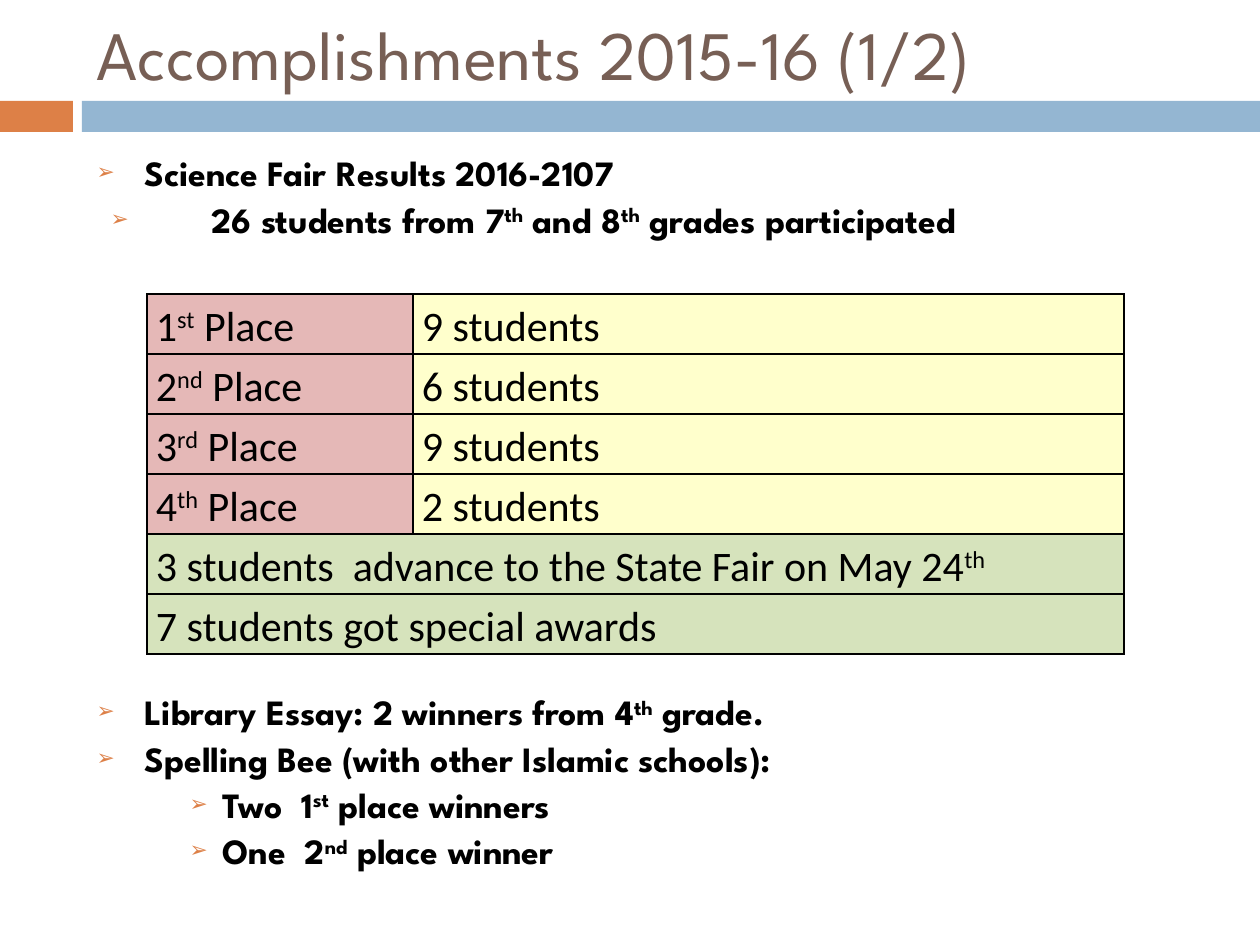
"""Build the school accomplishments slide with its science fair results table."""
from dataclasses import dataclass

from lxml import etree
from pptx import Presentation
from pptx import util as u
from pptx.dml.color import RGBColor
from pptx.enum import shapes, text
from pptx.oxml import ns


@dataclass(frozen=True)
class Theme:
    heading_font: str = "League Spartan"
    table_font: str = "Calibri"
    heading: str = "775F55"
    ink: str = "000000"
    accent: str = "DD8047"
    band: str = "94B6D2"
    place: str = "E5B8B7"
    count: str = "FFFFCC"
    summary: str = "D6E3BC"
    title_size: float = 39.6
    body_size: float = 20.3
    table_size: float = 24


def px(length):
    return u.Emu(round(length * 914400 / 126))


def assign(target, values):
    for name, value in values.items():
        setattr(target, name, value)


def add_xml(parent, tag, **attributes):
    return etree.SubElement(parent, ns.qn(tag), attributes)


class SlideBuilder:
    def __init__(self, slide, theme):
        self.slide = slide
        self.theme = theme

    def add_runs(self, paragraph, wording, font, size, color, bold=False):
        for index, part in enumerate(wording.split("^")):
            if not part:
                continue
            run = paragraph.add_run()
            run.text = part
            assign(run.font, {"name": font, "size": u.Pt(size), "bold": bold})
            run.font.color.rgb = RGBColor.from_string(color)
            if index % 2:
                run.font._element.set("baseline", "30000")

    def place(self, holder, box, anchor):
        assign(holder, dict(zip(("left", "top", "width", "height"), map(px, box))))
        sides = ("left", "top", "right", "bottom")
        assign(holder.text_frame, {f"margin_{side}": u.Inches(0.1) for side in sides})
        assign(holder.text_frame, {"vertical_anchor": anchor, "word_wrap": True,
                                   "auto_size": text.MSO_AUTO_SIZE.NONE})
        return holder.text_frame

    def bar(self, box, color):
        bar = self.slide.shapes.add_shape(shapes.MSO_SHAPE.RECTANGLE, *map(px, box))
        bar.shadow.inherit = False
        bar.fill.solid()
        bar.fill.fore_color.rgb = RGBColor.from_string(color)
        bar.line.fill.background()

    def title(self, wording, box):
        frame = self.place(self.slide.shapes.title, box, text.MSO_ANCHOR.MIDDLE)
        heading = frame.paragraphs[0]
        heading.alignment = text.PP_ALIGN.LEFT
        self.add_runs(heading, wording, self.theme.heading_font,
                      self.theme.title_size, self.theme.heading)

    def bullets(self, items, box):
        frame = self.place(self.slide.placeholders[1], box, text.MSO_ANCHOR.TOP)
        for index, (wording, level, margin, hanging, before) in enumerate(items):
            item = frame.add_paragraph() if index else frame.paragraphs[0]
            assign(item, {"level": level, "line_spacing": 0.8,
                          "space_before": u.Pt(before),
                          "alignment": text.PP_ALIGN.LEFT})
            layout = item._p.get_or_add_pPr()
            layout.set("marL", str(px(margin)))
            layout.set("indent", str(px(-hanging)))
            add_xml(add_xml(layout, "a:buClr"), "a:srgbClr", val=self.theme.accent)
            add_xml(layout, "a:buSzPct", val="61000")
            add_xml(layout, "a:buChar", char="➢")
            self.add_runs(item, wording, self.theme.heading_font,
                          self.theme.body_size, self.theme.ink, bold=True)

    def cell(self, cell, wording, color):
        assign(cell, {"margin_left": px(9), "margin_right": px(9),
                      "margin_top": 0, "margin_bottom": 0})
        if wording:
            line = cell.text_frame.paragraphs[0]
            line.line_spacing = 1.15
            self.add_runs(line, wording, self.theme.table_font,
                          self.theme.table_size, self.theme.ink)
        properties = cell._tc.get_or_add_tcPr()
        for edge in ("a:lnL", "a:lnR", "a:lnT", "a:lnB"):
            border = add_xml(properties, edge, w=str(u.Pt(1)))
            add_xml(add_xml(border, "a:solidFill"), "a:srgbClr", val=self.theme.ink)
        cell.fill.solid()
        cell.fill.fore_color.rgb = RGBColor.from_string(color)

    def results(self, rows, left, top, widths, row_height):
        box = (left, top, sum(widths), row_height * len(rows))
        table = self.slide.shapes.add_table(len(rows), len(widths), *map(px, box)).table
        assign(table, {"first_row": False, "horz_banding": False})
        for column, width in zip(table.columns, widths):
            column.width = px(width)
        for index, (label, count) in enumerate(rows):
            table.rows[index].height = px(row_height)
            first, second = table.cell(index, 0), table.cell(index, 1)
            if not count:
                first.merge(second)
            self.cell(first, label, self.theme.place if count else self.theme.summary)
            self.cell(second, count, self.theme.count if count else self.theme.summary)


def main():
    deck = Presentation()
    assign(deck, {"slide_width": px(1260), "slide_height": px(945)})
    theme = Theme()
    page = SlideBuilder(deck.slides.add_slide(deck.slide_layouts[1]), theme)

    page.bar((0, 101, 73, 31), theme.accent)
    page.bar((82, 101, 1178, 31), theme.band)
    page.title("Accomplishments 2015-16 (1/2)", (84, 21, 1124, 63))
    page.bullets([
        ("Science Fair Results 2016-2107", 0, 48, 48, 0),
        ("26 students from 7^th^ and 8^th^ grades participated", 0, 115, 101, 7),
        ("Library Essay: 2 winners from 4^th^ grade.", 0, 48, 48, 262),
        ("Spelling Bee (with other Islamic schools):", 0, 48, 48, 7),
        ("Two  1^st^ place winners", 1, 126, 33, 7),
        ("One  2^nd^ place winner", 1, 126, 33, 7),
    ], (84, 147, 1124, 766))
    page.results([
        ("1^st^ Place", "9 students"),
        ("2^nd^ Place", "6 students"),
        ("3^rd^ Place", "9 students"),
        ("4^th^ Place", "2 students"),
        ("3 students  advance to the State Fair on May 24^th^", ""),
        ("7 students got special awards", ""),
    ], 147, 294, (266, 711), 60)
    deck.save("out.pptx")


if __name__ == "__main__":
    main()
